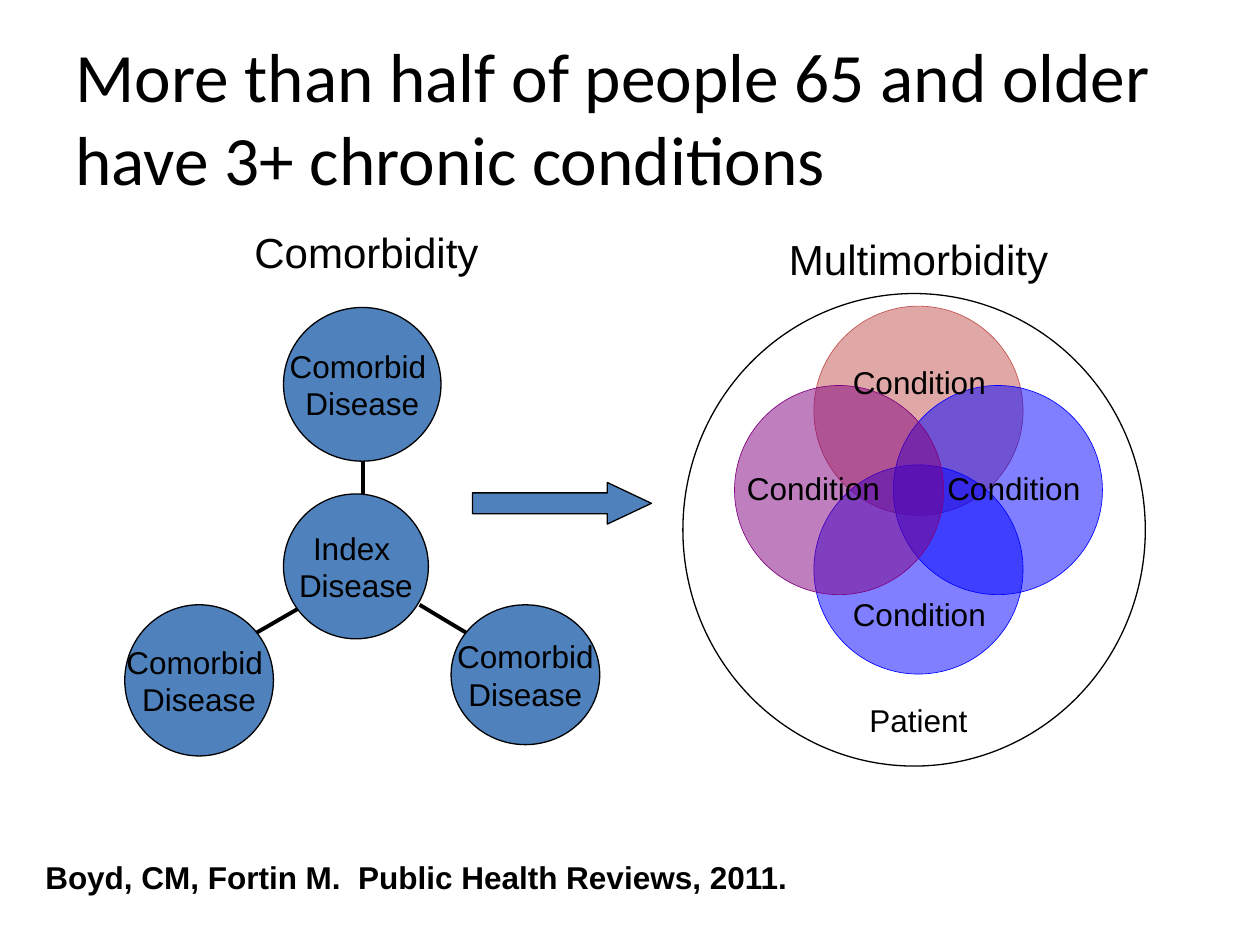
import pptx
from lxml import etree
from pptx.dml.color import RGBColor
from pptx.enum.shapes import MSO_CONNECTOR, MSO_SHAPE
from pptx.enum.text import MSO_ANCHOR, MSO_AUTO_SIZE, PP_ALIGN
from pptx.oxml.ns import qn
from pptx.util import Inches

BLACK = RGBColor(0x00, 0x00, 0x00)
STEEL = RGBColor(0x4F, 0x81, 0xBD)
RED = RGBColor(0xC0, 0x50, 0x4D)
BLUE = RGBColor(0x00, 0x00, 0xFF)
PURPLE = RGBColor(0x80, 0x00, 0x80)


def write(shape, text, size=18, align=PP_ALIGN.LEFT, font="Arial", bold=False,
          wrap=True, anchor=MSO_ANCHOR.TOP):
    text_frame = shape.text_frame
    text_frame.text = text
    text_frame.word_wrap = wrap
    text_frame.vertical_anchor = anchor
    for paragraph in text_frame.paragraphs:
        paragraph.alignment = align
        for run in paragraph.runs:
            run.font.name = font
            run.font.size = pptx.util.Pt(size)
            run.font.bold = bold
            run.font.color.rgb = BLACK


def write_centered(shape, text, size=18):
    """Centre the text on the shape, free to run past its sides."""
    write(shape, text, size=size, align=PP_ALIGN.CENTER, wrap=False,
          anchor=MSO_ANCHOR.MIDDLE)


def add_label(shapes, box, text, **style):
    label = shapes.add_textbox(*box)
    write(label, text, **style)
    return label


def add_figure(shapes, kind, box, fill=None, line=BLACK, width=0.75, opacity=100):
    """Add a preset shape; fill or line may be None for no fill or no outline."""
    shape = shapes.add_shape(kind, *box)
    shape.shadow.inherit = False
    if line is None:
        shape.line.fill.background()
    else:
        shape.line.color.rgb = line
        shape.line.width = pptx.util.Pt(width)
    if fill is None:
        shape.fill.background()
        return shape
    shape.fill.solid()
    shape.fill.fore_color.rgb = fill
    if opacity < 100:
        color = shape._element.spPr.find(qn("a:solidFill"))[0]
        etree.SubElement(color, qn("a:alpha")).set("val", str(opacity * 1000))
    return shape


def add_spoke(shapes, start, end):
    spoke = shapes.add_connector(MSO_CONNECTOR.STRAIGHT, *start, *end)
    spoke.line.color.rgb = BLACK
    spoke.line.width = pptx.util.Pt(2.25)
    etree.SubElement(spoke._element.spPr, qn("a:effectLst"))


def add_title(slide, box):
    title = slide.shapes.title
    title.left, title.top, title.width, title.height = box
    write(title, "More than half of people 65 and older have 3+ chronic conditions",
          size=39.6, font="Calibri", anchor=MSO_ANCHOR.MIDDLE)
    title.text_frame.auto_size = MSO_AUTO_SIZE.NONE


def add_comorbidity(slide, left, top):
    """Index disease as a hub with three comorbid diseases around it."""
    def place(x, y):
        return left + Inches(x), top + Inches(y)

    shapes = slide.shapes.add_group_shape().shapes
    spokes = [((1.43, 3.05), (0.98, 3.31)),
              ((2.34, 3.05), (2.79, 3.32)),
              ((1.89, 2.27), (1.89, 1.74))]
    for start, end in spokes:
        add_spoke(shapes, place(*start), place(*end))

    diseases = [("Comorbid \nDisease", 0, 3.05, 1.18, 1.2),
                ("Comorbid\nDisease", 2.59, 3.05, 1.18, 1.11),
                ("Comorbid \nDisease", 1.26, 0.69, 1.25, 1.22),
                ("Index \nDisease", 1.26, 2.17, 1.15, 1.15)]
    for text, x, y, width, height in diseases:
        box = (*place(x, y), Inches(width), Inches(height))
        circle = add_figure(shapes, MSO_SHAPE.OVAL, box, STEEL)
        write_centered(circle, text)

    add_label(slide.shapes, (*place(0.93, 0), Inches(1.98), Inches(0.5)),
              "Comorbidity", size=24, wrap=False)


def add_multimorbidity(slide, left, top):
    """Four overlapping conditions within the circle of one patient."""
    def place(x, y):
        return left + Inches(x), top + Inches(y)

    shapes = slide.shapes.add_group_shape().shapes
    diameter, offset = 1.66, 0.63
    center_x, center_y = 1.87, 2.04
    conditions = [(0, -1, RED), (1, 0, BLUE), (0, 1, BLUE), (-1, 0, PURPLE)]
    for across, down, color in conditions:
        corner = place(center_x + across * offset - diameter / 2,
                       center_y + down * offset - diameter / 2)
        add_figure(shapes, MSO_SHAPE.OVAL, (*corner, Inches(diameter), Inches(diameter)),
                   color, line=color, width=0.37, opacity=50)

    for text, y, size in [("Multimorbidity", 0, 24), ("Patient", 3.66, 18)]:
        caption = add_figure(shapes, MSO_SHAPE.RECTANGLE,
                             (*place(1.65, y), Inches(0.44), Inches(0.41)), line=None)
        write_centered(caption, text, size)

    for x, y in [(0.41, 1.82), (2, 1.82), (1.25, 0.98), (1.25, 2.82)]:
        add_label(shapes, (*place(x, y), Inches(1.33), Inches(0.4)), "Condition")

    add_figure(slide.shapes, MSO_SHAPE.OVAL,
               (*place(0, 0.48), Inches(3.67), Inches(3.75)))


def add_arrow(slide, box):
    arrow = add_figure(slide.shapes, MSO_SHAPE.RIGHT_ARROW, box, STEEL)
    arrow.adjustments[0] = 0.5
    arrow.adjustments[1] = 1.06


def add_citation(slide, box):
    citation = add_label(slide.shapes, box,
                         "Boyd, CM, Fortin M.  Public Health Reviews, 2011.", bold=True)
    text_frame = citation.text_frame
    text_frame.margin_left = text_frame.margin_right = 0
    text_frame.margin_top = text_frame.margin_bottom = 0
    text_frame.paragraphs[0].line_spacing = 0.97


def main():
    presentation = pptx.Presentation()
    presentation.slide_width = Inches(10)
    presentation.slide_height = Inches(7.5)
    slide = presentation.slides.add_slide(presentation.slide_layouts[5])
    add_title(slide, (Inches(0.5), Inches(0.3), Inches(9), Inches(1.25)))
    add_comorbidity(slide, Inches(0.99), Inches(1.75))
    add_multimorbidity(slide, Inches(5.42), Inches(1.85))
    add_arrow(slide, (Inches(3.75), Inches(3.83), Inches(1.42), Inches(0.33)))
    add_citation(slide, (Inches(0.36), Inches(6.83), Inches(9.64), Inches(0.29)))
    presentation.save("out.pptx")


if __name__ == "__main__":
    main()
